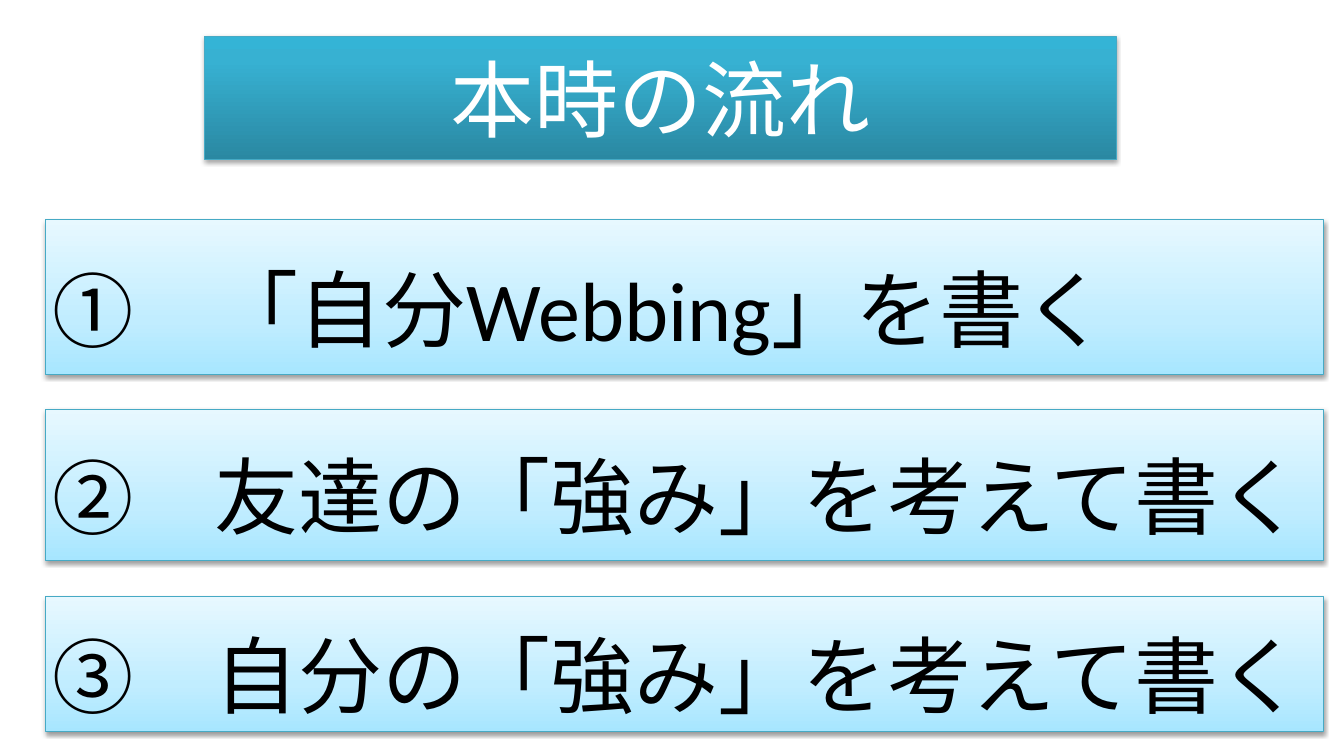
from lxml import etree
from pptx import Presentation
from pptx.dml.color import RGBColor as RGB
from pptx.enum.shapes import MSO_SHAPE as Shape
from pptx.enum.text import MSO_ANCHOR as Anchor, MSO_AUTO_SIZE as Auto, PP_ALIGN as Align
from pptx.oxml.ns import qn
from pptx.util import Inches, Pt

# Content: (number, number font, step, top, height)
TITLE = "本時の流れ"
STEPS = [
    ("①　", "Arial", "「自分Webbing」を書く", 2.18, 1.54),
    ("②　", "Arial", "友達の「強み」を考えて書く", 4.06, 1.5),
    ("③　", "Calibri", "自分の「強み」を考えて書く", 5.92, 1.34),
]
LEFT, WIDTH = 0.45, 12.68
PALE = [(0, "A7E6FF"), (35, "C1EDFF"), (100, "E7F8FF")]
DEEP = [(0, "2A88A2"), (80, "37B1D2"), (100, "34B4D6")]
EDGE = "46AAC5"


def color(text):
    return RGB.from_string(text)


def add(parent, tag, **attrs):
    return etree.SubElement(parent, qn(tag), {k: str(v) for k, v in attrs.items()})


def add_rgb(parent, text, alpha=100):
    node = add(parent, "a:srgbClr", val=text)
    if alpha < 100:
        add(node, "a:alpha", val=alpha * 1000)


def style(shape, stops, alpha, dist):
    """Upward gradient, thin edge and a soft shadow below."""
    shape.fill.gradient()
    grad = shape._element.spPr.find(qn("a:gradFill"))
    for child in list(grad):
        grad.remove(child)
    group = add(grad, "a:gsLst")
    for pos, text in stops:
        add_rgb(add(group, "a:gs", pos=pos * 1000), text)
    add(grad, "a:lin", ang=270 * 60000, scaled=0)

    shape.line.color.rgb = color(EDGE)
    shape.line.width = Pt(0.75)

    shape.shadow.inherit = False
    effects = shape._element.spPr.find(qn("a:effectLst"))
    shadow = add(effects, "a:outerShdw", blurRad=Pt(3.1), dist=Pt(dist),
                 dir=90 * 60000, rotWithShape=0)
    add_rgb(shadow, "000000", alpha)


def write(para, text, font, size, ink):
    run = para.add_run()
    run.text = text
    run.font.name = font
    run.font.size = Pt(size)
    run.font.color.rgb = color(ink)


deck = Presentation()
deck.slide_width, deck.slide_height = Inches(13.33), Inches(7.5)
slide = deck.slides.add_slide(deck.slide_layouts[5])

# Step boxes
for mark, font, step, top, height in STEPS:
    box = slide.shapes.add_shape(Shape.RECTANGLE, Inches(LEFT), Inches(top),
                                 Inches(WIDTH), Inches(height))
    style(box, PALE, 38, 1.6)
    frame = box.text_frame
    frame.word_wrap = True
    frame.vertical_anchor = Anchor.MIDDLE
    frame.margin_left = frame.margin_right = Inches(0.07)
    frame.margin_top = frame.margin_bottom = Inches(0.04)
    para = frame.paragraphs[0]
    para.alignment = Align.LEFT
    para.line_spacing = 1.2
    write(para, mark, font, 58, "000000")
    write(para, step, "Calibri", 60, "000000")

# Title
title = slide.shapes.title
title.left, title.top = Inches(2.03), Inches(0.36)
title.width, title.height = Inches(9.04), Inches(1.22)
style(title, DEEP, 35, 1.8)
frame = title.text_frame
frame.auto_size = Auto.NONE
frame.vertical_anchor = Anchor.MIDDLE
para = frame.paragraphs[0]
para.alignment = Align.CENTER
write(para, TITLE, "Calibri", 60, "FFFFFF")

deck.save("out.pptx")
